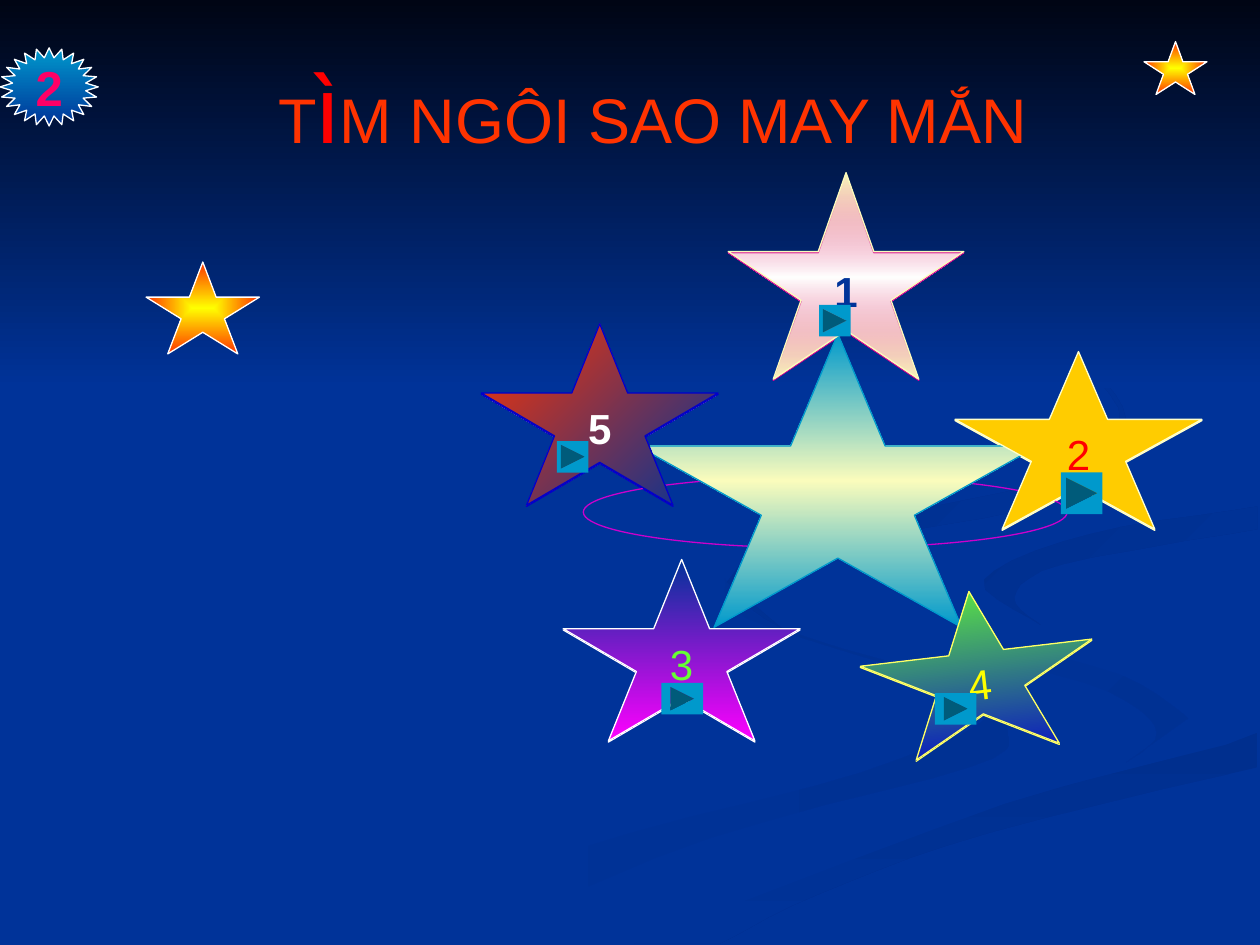
from dataclasses import dataclass
from typing import Optional, Union

from lxml.etree import SubElement
from pptx import Presentation
from pptx.dml.color import RGBColor as RGB
from pptx.enum.shapes import MSO_SHAPE as Shp
from pptx.enum.text import MSO_ANCHOR as Anchor, PP_ALIGN as Align
from pptx.oxml.ns import qn
from pptx.util import Pt

PX = 9144
STEPS = 5


@dataclass(frozen=True)
class Theme:
    font: str = "Arial"
    accent_font: str = "Roboto"
    title_pt: int = 36
    accent_pt: int = 54
    star_pt: int = 24
    badge_pt: int = 28
    line_pt: float = 0.75
    navy: str = "003399"
    night: str = "000514"
    faint: str = "003193"
    swirl: str = "002F8E"
    teal: str = "0099CC"
    cream: str = "FAFCBC"
    pale: str = "FFFFCC"
    white: str = "FFFFFF"
    black: str = "000000"
    orange: str = "FF3300"
    red: str = "FF0000"
    yellow: str = "FFFF00"
    lemon: str = "FFFF66"
    gold: str = "FFCC00"
    green: str = "66FF33"
    blue: str = "0000CC"
    royal: str = "0000D0"
    violet: str = "6600CC"
    lilac: str = "A886E0"
    plum: str = "990099"
    magenta: str = "FF00FF"
    orchid: str = "CC00CC"
    rose: str = "D60093"
    pink: str = "FF0066"


T = Theme()
Point = tuple[int, int]
Edge = tuple[Point, ...]


@dataclass(frozen=True)
class Stop:
    pos: int
    color: str
    alpha: int = 100


@dataclass(frozen=True)
class Gradient:
    stops: tuple[Stop, ...]
    angle: Optional[int] = 90


Fill = Union[str, Gradient, None]


@dataclass(frozen=True)
class Label:
    text: str
    color: str
    bold: bool = False
    size: int = T.star_pt


@dataclass(frozen=True)
class Item:
    box: tuple[int, int, int, int]
    fill: Fill = None
    line: Optional[str] = None
    label: Optional[Label] = None
    rot: float = 0
    kind: Shp = Shp.STAR_5_POINT
    under: Fill = None
    under_line: Optional[str] = None


@dataclass(frozen=True)
class Swirl:
    fill: Fill
    edges: tuple[Edge, Edge]


def blend(start: str, end: str, angle: Optional[int] = 90) -> Gradient:
    return Gradient((Stop(0, start), Stop(100, end)), angle)


def band(edge: str, middle: str, alpha: int = 100) -> Gradient:
    return Gradient((Stop(0, edge), Stop(50, middle, alpha), Stop(100, edge)))


def smooth(edge: Edge) -> list[Point]:
    padded = (edge[0], *edge, edge[-1])
    curve = []
    for a, b, c, d in zip(padded, padded[1:], padded[2:], padded[3:]):
        for step in range(STEPS):
            t = step / STEPS
            curve.append(tuple(
                round(q + t * (r - p + t * (2 * p - 5 * q + 4 * r - v + t * (3 * (q - r) + v - p))) / 2)
                for p, q, r, v in zip(a, b, c, d)))
    return curve + [edge[-1]]


def paint(sp, fill: Fill, line: Optional[str] = None) -> None:
    sp.shadow.inherit = False
    if fill is None:
        sp.fill.background()
    elif isinstance(fill, str):
        sp.fill.solid()
        sp.fill.fore_color.rgb = RGB.from_string(fill)
    else:
        sp.fill.gradient()
        grad = sp.element.spPr.find(qn("a:gradFill"))
        for child in list(grad):
            grad.remove(child)
        stops = SubElement(grad, qn("a:gsLst"))
        for stop in fill.stops:
            gs = SubElement(stops, qn("a:gs"), pos=str(stop.pos * 1000))
            color = SubElement(gs, qn("a:srgbClr"), val=stop.color)
            if stop.alpha < 100:
                SubElement(color, qn("a:alpha"), val=str(stop.alpha * 1000))
        if fill.angle is None:
            center = SubElement(grad, qn("a:path"), path="shape")
            SubElement(center, qn("a:fillToRect"), {k: "50000" for k in "ltrb"})
        else:
            SubElement(grad, qn("a:lin"), ang=str(fill.angle * 60000), scaled="1")
    if line:
        sp.line.color.rgb = RGB.from_string(line)
        sp.line.width = Pt(T.line_pt)
    else:
        sp.line.fill.background()


def style(r, font: str, size: int, color: str, bold: bool = False) -> None:
    r.font.name, r.font.size, r.font.bold = font, Pt(size), bold
    r.font.color.rgb = RGB.from_string(color)


def draw_item(s, item: Item) -> None:
    sp = s.shapes.add_shape(item.kind, *(v * PX for v in item.box))
    sp.rotation = item.rot
    paint(sp, item.fill, item.line)
    if item.label:
        tf = sp.text_frame
        tf.text = item.label.text
        tf.word_wrap = False
        tf.vertical_anchor = Anchor.MIDDLE
        p = tf.paragraphs[0]
        p.alignment = Align.CENTER
        style(p.runs[0], T.font, item.label.size, item.label.color, item.label.bold)


def draw_swirl(s, swirl: Swirl) -> None:
    start, *rest = [point for edge in swirl.edges for point in smooth(edge)]
    fb = s.shapes.build_freeform(*start, scale=PX)
    fb.add_line_segments(rest, close=True)
    paint(fb.convert_to_shape(), swirl.fill)


def draw_title(s) -> None:
    tf = s.shapes.add_textbox(170 * PX, 34 * PX, 696 * PX, 100 * PX).text_frame
    tf.word_wrap = True
    p = tf.paragraphs[0]
    p.alignment = Align.CENTER
    before = SubElement(p._p.get_or_add_pPr(), qn("a:spcBef"))
    SubElement(before, qn("a:spcPct"), val="50000")
    plain = (T.font, T.title_pt, T.orange)
    accent = (T.accent_font, T.accent_pt, T.red)
    for text, look in (("T", plain), ("ì", accent), ("M NGÔI SAO MAY MẮN", plain)):
        r = p.add_run()
        r.text = text
        style(r, *look)
        props = r._r.get_or_add_rPr()
        effects = props.makeelement(qn("a:effectLst"))
        props.find(qn("a:solidFill")).addnext(effects)
        shadow = SubElement(effects, qn("a:outerShdw"), dist="38100", dir="2700000")
        SubElement(shadow, qn("a:srgbClr"), val=T.black)


SWIRLS = (
    Swirl(blend(T.navy, T.faint, 0), (
        ((575, 459), (593, 491), (728, 535), (786, 566), (684, 613), (458, 674), (300, 749)),
        ((361, 749), (564, 665), (769, 609), (800, 581), (757, 543), (614, 496), (575, 459)))),
    Swirl(blend(T.navy, T.faint, 45), (
        ((724, 464), (766, 512), (880, 549), (918, 581), (894, 605)),
        ((943, 570), (888, 535), (758, 498), (724, 464)))),
    Swirl(blend(T.swirl, T.navy), (
        ((503, 749), (630, 693), (797, 638), (998, 581)),
        ((998, 609), (785, 661), (649, 710), (571, 749)))),
    Swirl(T.navy, (
        ((477, 749), (663, 668), (902, 603), (943, 570), (889, 535), (759, 498), (725, 464), (808, 417), (999, 387)),
        ((999, 402), (835, 430), (781, 463), (832, 498), (999, 538), (999, 581), (797, 638), (503, 749)))),
    Swirl(blend(T.swirl, T.navy, 45), (
        ((826, 496), (781, 460), (865, 424), (998, 402)),
        ((998, 420), (843, 448), (805, 474), (826, 496)))),
    Swirl(blend(T.swirl, T.navy, 45), (
        ((762, 233), (864, 291), (894, 344), (841, 396), (683, 430), (593, 470), (622, 500)),
        ((577, 462), (625, 426), (830, 382), (889, 335), (846, 279), (762, 233)))),
)
SPARK = blend(T.yellow, T.orange, None)
STARS = (
    Item((908, 33, 50, 42), SPARK, T.white),
    Item((463, 378, 384, 57), None, T.orchid, kind=Shp.OVAL),
    Item((506, 265, 318, 233), band(T.teal, T.cream), T.teal),
    Item((578, 137, 187, 164), band(T.cream, T.pale, 2), T.cream, Label("1", T.navy, True),
         under=band(T.rose, T.white), under_line=T.rose),
    Item((758, 279, 196, 141), T.gold, T.pale, Label("2", T.red), under=T.gold, under_line=T.pale),
    Item((684, 469, 185, 128), blend(T.green, T.royal), T.lemon, Label("4", T.yellow), 353.3,
         under=T.lilac, under_line=T.lemon),
    Item((447, 444, 188, 144), blend(T.navy, T.magenta), T.white, Label("3", T.green),
         under=T.plum, under_line=T.white),
    Item((382, 257, 188, 144), blend(T.orange, T.navy, 45), T.blue, Label("5", T.white, True),
         under=band(T.violet, T.white), under_line=T.blue),
    Item((116, 208, 90, 73), SPARK, T.white),
    Item((0, 38, 78, 62), blend(T.teal, T.navy), T.white,
         Label("2", T.pink, True, T.badge_pt), kind=Shp.STAR_24_POINT),
)
BUTTONS = ((650, 242, 25, 25), (842, 375, 33, 33), (525, 542, 33, 25), (742, 550, 33, 25), (442, 350, 25, 25))


def main() -> None:
    prs = Presentation()
    prs.slide_width, prs.slide_height = 1000 * PX, 750 * PX
    s = prs.slides.add_slide(prs.slide_layouts[6])
    s.background.fill.solid()
    s.background.fill.fore_color.rgb = RGB.from_string(T.navy)
    for swirl in SWIRLS:
        draw_swirl(s, swirl)
    draw_item(s, Item((0, 0, 1000, 308), blend(T.night, T.navy), kind=Shp.RECTANGLE))
    for star in STARS:
        if star.under:
            left, top, width, height = star.box
            draw_item(s, Item((left, top + 1, width, height), star.under, star.under_line, rot=star.rot))
    draw_title(s)
    for star in STARS:
        draw_item(s, star)
    for box in BUTTONS:
        draw_item(s, Item(box, T.teal, kind=Shp.ACTION_BUTTON_FORWARD_OR_NEXT))
    prs.save("out.pptx")


if __name__ == "__main__":
    main()
